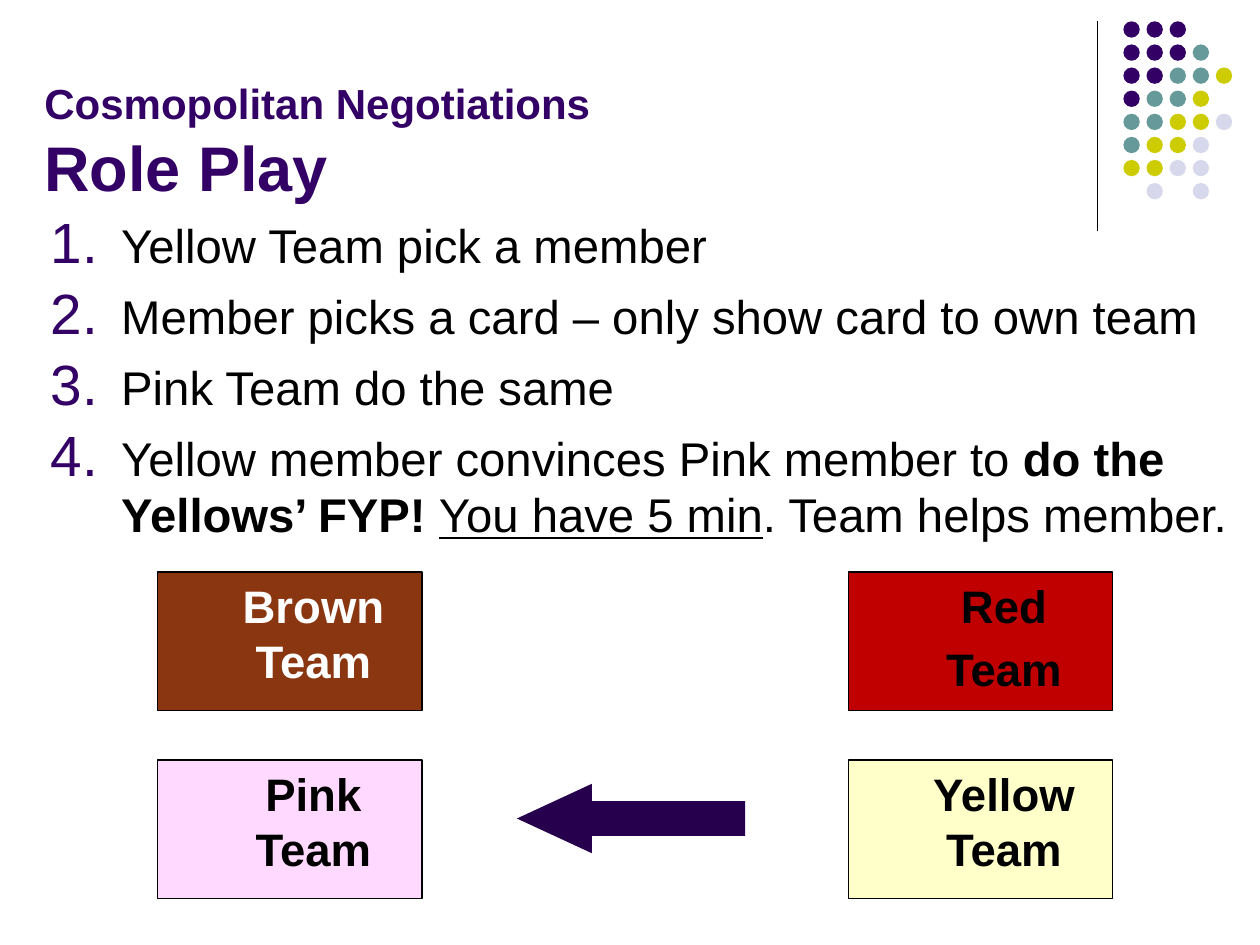
from dataclasses import dataclass

from lxml import etree
from pptx import Presentation
from pptx.dml.color import RGBColor
from pptx.enum.shapes import MSO_CONNECTOR, MSO_SHAPE
from pptx.enum.text import MSO_ANCHOR, MSO_AUTO_SIZE, PP_ALIGN
from pptx.oxml.ns import qn
from pptx.util import Cm, Pt

OVAL, RECT, ARROW = MSO_SHAPE.OVAL, MSO_SHAPE.RECTANGLE, MSO_SHAPE.RIGHT_ARROW
STRAIGHT = MSO_CONNECTOR.STRAIGHT
TOP, BOTTOM = MSO_ANCHOR.TOP, MSO_ANCHOR.BOTTOM
LEFT, CENTER = PP_ALIGN.LEFT, PP_ALIGN.CENTER
NO_FIT = MSO_AUTO_SIZE.NONE


@dataclass(frozen=True)
class Theme:
    font: str = "Arial"
    purple: str = "330066"
    teal: str = "669999"
    lime: str = "CCCC00"
    lavender: str = "D8D8EC"
    arrow: str = "26004D"
    black: str = "000000"
    white: str = "FFFFFF"
    brown: str = "893611"
    red: str = "C00000"
    pink: str = "FFD9FF"
    yellow: str = "FFFFC9"
    kicker_size: float = 24
    title_size: float = 36
    body_size: float = 27
    team_size: float = 26
    line_width: float = 0.75


THEME = Theme()

DOT_ROWS = ["PPP", "PPPT", "PPTTY", "PTTY", "TTYYL", "TYYL", "YYLL", " L L"]
DOT_COLORS = {"P": THEME.purple, "T": THEME.teal, "Y": THEME.lime, "L": THEME.lavender}

# Each step is a list of (text, style) pieces
STEPS = [
    [("Yellow Team pick a member", "")],
    [("Member picks a card – only show card to own team", "")],
    [("Pink Team do the same", "")],
    [
        ("Yellow member convinces Pink member to ", ""),
        ("do the Yellows’ FYP! ", "bold"),
        ("You have 5 min", "underline"),
        (". Team helps member.", ""),
    ],
]

# Rows of (paragraphs, fill, text colour)
TEAMS = [
    [(["Brown Team"], THEME.brown, THEME.white), (["Red", "Team"], THEME.red, THEME.black)],
    [(["Pink\vTeam"], THEME.pink, THEME.black), (["Yellow Team"], THEME.yellow, THEME.black)],
]


def style_run(run, size, color, bold=False, underline=False):
    run.font.name = THEME.font
    run.font.size = Pt(size)
    run.font.bold = bold
    run.font.underline = underline
    run.font.color.rgb = RGBColor.from_string(color)


def place(shape, left, top, width, height):
    shape.left, shape.top, shape.width, shape.height = left, top, width, height


def add_filled(shapes, kind, box, fill, outline=None):
    shape = shapes.add_shape(kind, *box)
    shape.shadow.inherit = False
    shape.fill.solid()
    shape.fill.fore_color.rgb = RGBColor.from_string(fill)
    if outline:
        shape.line.color.rgb = RGBColor.from_string(outline)
        shape.line.width = Pt(THEME.line_width)
    else:
        shape.line.fill.background()
    return shape


def add_corner_ornament(slide, left, top, width, height):
    # Vertical rule on the left edge
    rule = slide.shapes.add_connector(STRAIGHT, left, top, left, top + height)
    rule.line.color.rgb = RGBColor.from_string(THEME.black)
    rule.line.width = Pt(THEME.line_width)
    etree.SubElement(rule._element.spPr, qn("a:effectLst"))

    # Dot grid, aligned to the right edge
    dot, pitch = Cm(0.33), Cm(3.26) / 7
    columns = max(len(row) for row in DOT_ROWS)
    grid_left = left + width - dot - (columns - 1) * pitch
    dots = slide.shapes.add_group_shape().shapes
    for r, row in enumerate(DOT_ROWS):
        for c, key in enumerate(row):
            if key in DOT_COLORS:
                box = (round(grid_left + c * pitch), round(top + r * pitch), dot, dot)
                add_filled(dots, OVAL, box, DOT_COLORS[key])


def fill_title(slide, *box):
    title = slide.shapes.title
    place(title, *box)
    frame = title.text_frame
    frame.text = "Cosmopolitan Negotiations\vRole Play"
    frame.auto_size = NO_FIT
    frame.vertical_anchor = BOTTOM
    heading = frame.paragraphs[0]
    heading.alignment = LEFT
    for run, size in zip(heading.runs, (THEME.kicker_size, THEME.title_size)):
        style_run(run, size, THEME.purple, bold=True)


def number_paragraph(paragraph):
    props = paragraph._p.get_or_add_pPr()
    props.set("marL", str(Cm(1.55)))
    props.set("indent", str(-Cm(1.42)))
    color = etree.SubElement(props, qn("a:buClr"))
    etree.SubElement(color, qn("a:srgbClr"), val=THEME.purple)
    etree.SubElement(props, qn("a:buSzPct"), val="120000")
    etree.SubElement(props, qn("a:buFont"), typeface=THEME.font)
    etree.SubElement(props, qn("a:buAutoNum"), type="arabicPeriod")


def fill_steps(slide, *box):
    steps = slide.placeholders[1]
    place(steps, *box)
    frame = steps.text_frame
    frame.auto_size = NO_FIT
    for i, pieces in enumerate(STEPS):
        step = frame.add_paragraph() if i else frame.paragraphs[0]
        number_paragraph(step)
        step.space_before = Pt(8 if i else 0)
        for text, style in pieces:
            run = step.add_run()
            run.text = text
            style_run(run, THEME.body_size, THEME.black, style == "bold", style == "underline")


def add_team(slide, box, lines, fill, text_color):
    team = add_filled(slide.shapes, RECT, box, fill, THEME.black)
    frame = team.text_frame
    frame.word_wrap = True
    frame.vertical_anchor = TOP
    for i, line in enumerate(lines):
        paragraph = frame.add_paragraph() if i else frame.paragraphs[0]
        paragraph.text = line
        paragraph.alignment = CENTER
        paragraph.space_before = Pt(5 if i else 0)
        paragraph._p.get_or_add_pPr().set("marL", str(Cm(0.95)))
        paragraph._p.get_or_add_pPr().set("indent", "0")
        for run in paragraph.runs:
            style_run(run, THEME.team_size, text_color, bold=True)


def add_team_board(slide, left, top, width, height):
    # Two by two boxes in the corners of the board
    team_w, team_h = Cm(5.33), Cm(2.79)
    for r, row in enumerate(TEAMS):
        for c, team in enumerate(row):
            box = (left + c * (width - team_w), top + r * (height - team_h), team_w, team_h)
            add_team(slide, box, *team)

    # Arrow from the Yellow team to the Pink team
    box = (left + Cm(7.24), top + Cm(4.27), Cm(4.6), Cm(1.4))
    arrow = add_filled(slide.shapes, ARROW, box, THEME.arrow)
    arrow.rotation = 180
    arrow.adjustments[0] = 0.5
    arrow.adjustments[1] = 1.08


def main():
    deck = Presentation()
    deck.slide_width, deck.slide_height = Cm(25.4), Cm(19.05)
    slide = deck.slides.add_slide(deck.slide_layouts[1])
    add_corner_ornament(slide, Cm(22.12), Cm(0.43), Cm(2.72), Cm(4.22))
    fill_title(slide, Cm(0.64), Cm(0.64), Cm(21.39), Cm(3.6))
    fill_steps(slide, Cm(0.64), Cm(4.24), Cm(24.76), Cm(12.24))
    add_team_board(slide, Cm(3.18), Cm(11.53), Cm(19.25), Cm(6.58))
    deck.save("out.pptx")


if __name__ == "__main__":
    main()
